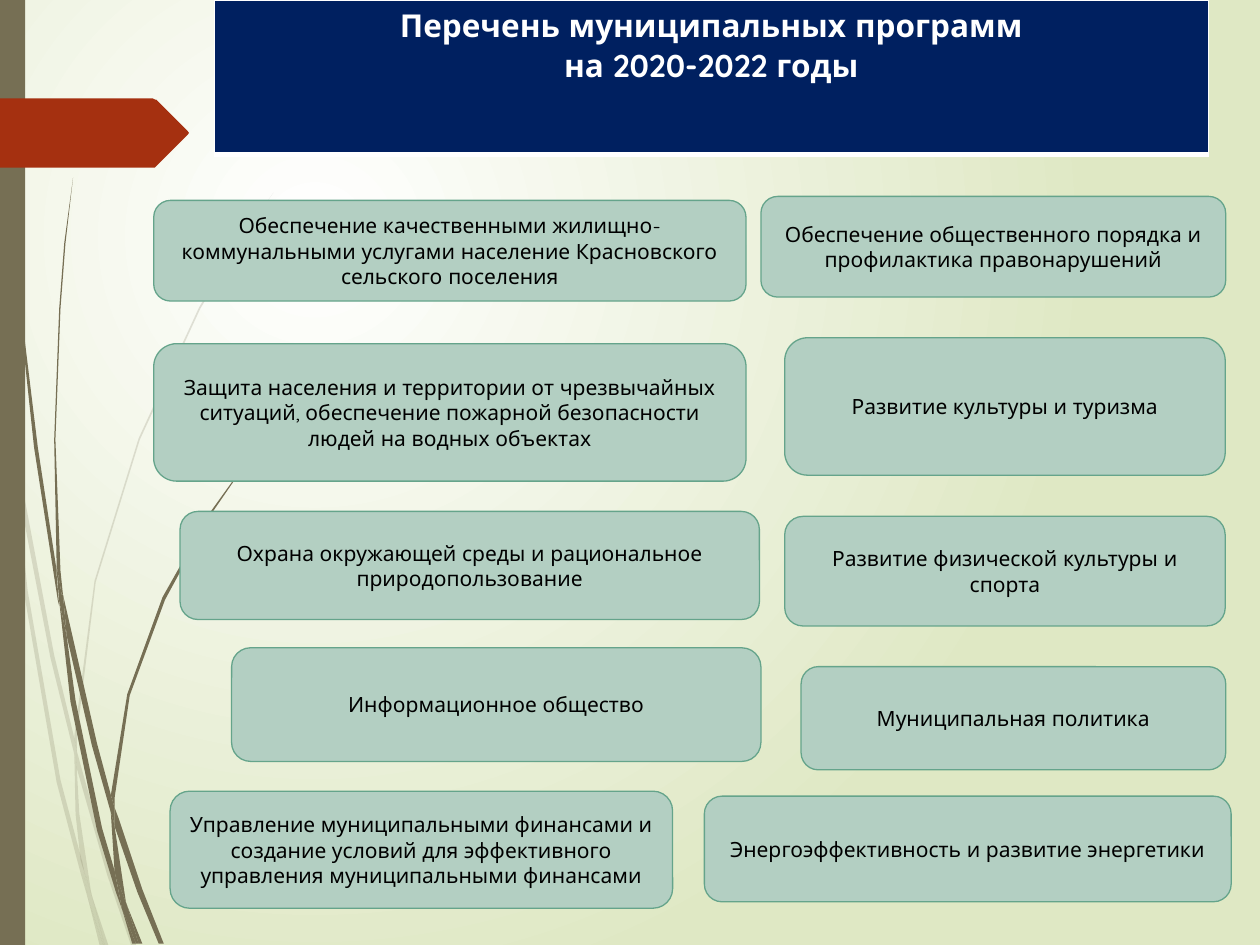
from lxml import etree
from pptx import Presentation
from pptx.dml.color import RGBColor
from pptx.enum.shapes import MSO_SHAPE
from pptx.enum.text import MSO_ANCHOR, PP_ALIGN
from pptx.oxml.ns import qn
from pptx.util import Cm, Pt

RECT, ROUND = MSO_SHAPE.RECTANGLE, MSO_SHAPE.ROUNDED_RECTANGLE
CENTER, MIDDLE = PP_ALIGN.CENTER, MSO_ANCHOR.MIDDLE
FONT = "Quicksand"
OLIVE, RED, NAVY = "766F54", "A53010", "002060"
MINT, GREEN, WHITE, BLACK = "B3CFC2", "65A48B", "FFFFFF", "000000"
UNIT = Cm(2.54) / 100  # outline points are on a grid of 0.0254 cm

TITLE = ["Перечень муниципальных программ", "на 2020-2022 годы"]

# Programs: left, top, width, height in cm, then the name
BOXES = [
    (3.1, 4.04, 11.94, 2.03, "Обеспечение качественными жилищно-коммунальными "
     "услугами население Красновского сельского поселения"),
    (15.34, 3.96, 9.37, 2.03, "Обеспечение общественного порядка и "
     "профилактика правонарушений"),
    (15.82, 6.81, 8.88, 2.77, "Развитие культуры и туризма"),
    (15.82, 10.41, 8.88, 2.21, "Развитие физической культуры и спорта"),
    (3.1, 6.93, 11.94, 2.77, "Защита населения и территории от чрезвычайных "
     "ситуаций, обеспечение пожарной безопасности людей на водных объектах"),
    (3.63, 10.31, 11.68, 2.18, "Охрана окружающей среды и рациональное "
     "природопользование"),
    (4.67, 13.06, 10.67, 2.29, "Информационное общество"),
    (16.15, 13.44, 8.56, 2.08, "Муниципальная политика"),
    (3.43, 15.95, 10.13, 2.36, "Управление муниципальными финансами и создание "
     "условий для эффективного управления муниципальными финансами"),
    (14.2, 16.05, 10.62, 2.13, "Энергоэффективность и развитие энергетики"),
]

# Grass outlines: pale blades behind, dark blades in front
PALE = [
    [(8, 350), (6, 322), (0, 282), (0, 299), (7, 344)],
    [(40, 522), (59, 599), (59, 586), (43, 520), (10, 345), (12, 376)],
    [(64, 607), (61, 596), (61, 610), (85, 694), (104, 750), (108, 750),
     (88, 692)],
    [(83, 750), (86, 750), (73, 711)],
    [(65, 683), (48, 619), (22, 469), (12, 376), (8, 350), (19, 470),
     (45, 621), (64, 693), (70, 714), (69, 707)],
    [(59, 599), (60, 646), (64, 683), (67, 692), (73, 711), (72, 706),
     (63, 646), (61, 610), (61, 608)],
    [(61, 584), (76, 462), (111, 349), (159, 245), (187, 198), (201, 175),
     (217, 153), (201, 175), (186, 197), (158, 244), (110, 348), (75, 461),
     (59, 584), (59, 586), (61, 596)],
    [(70, 714), (79, 750), (82, 750)],
    [(61, 608), (61, 610), (61, 596), (59, 586), (59, 599)],
    [(67, 692), (65, 683), (69, 707), (70, 714), (82, 750), (83, 750),
     (73, 711)],
]
DARK = [
    [(5, 110), (14, 233), (27, 355), (46, 477), (47, 481), (45, 457),
     (45, 453), (30, 355), (15, 232), (6, 109), (4, 48), (3, 0), (2, 0),
     (3, 48)],
    [(73, 592), (88, 645), (88, 633), (88, 631), (77, 590), (50, 472),
     (53, 505)],
    [(94, 649), (91, 641), (91, 656), (109, 708), (126, 749), (130, 749),
     (113, 706)],
    [(91, 691), (81, 657), (60, 556), (53, 505), (47, 477), (56, 557),
     (77, 659), (92, 708), (97, 722), (96, 717)],
    [(50, 472), (48, 453), (44, 349), (48, 245), (52, 193), (58, 141),
     (51, 193), (47, 245), (43, 349), (45, 449), (49, 472)],
    [(110, 749), (113, 749), (101, 719)],
    [(47, 477), (53, 505), (50, 472), (49, 472), (45, 449), (45, 453)],
    [(91, 633), (103, 552), (131, 476), (169, 406), (191, 374), (203, 359),
     (216, 344), (215, 344), (203, 358), (191, 373), (168, 405), (129, 474),
     (101, 551), (88, 631), (91, 641)],
    [(97, 722), (105, 749), (108, 749)],
    [(88, 645), (91, 692), (96, 706), (101, 719), (100, 716), (91, 656),
     (90, 651)],
    [(88, 645), (90, 651), (91, 656), (91, 641), (88, 631), (88, 633)],
    [(96, 706), (91, 691), (96, 717), (97, 722), (108, 749), (110, 749),
     (101, 719)],
]
ARROW = [(149, 107), (124, 132), (123, 133), (121, 133), (0, 133), (0, 78),
         (121, 78), (123, 79), (124, 79), (149, 104), (150, 105.5)]


def rgb(code):
    return RGBColor.from_string(code)


def paint(shape, fill, line=None):
    shape.shadow.inherit = False
    shape.fill.solid()
    shape.fill.fore_color.rgb = rgb(fill)
    if line:
        shape.line.color.rgb = rgb(line)
        shape.line.width = Pt(0.75)
    else:
        shape.line.fill.background()


def style(para, size, color, bold=False):
    para.alignment = CENTER
    for run in para.runs:
        font = run.font
        font.name, font.size, font.bold = FONT, Pt(size), bold
        font.color.rgb = rgb(color)


def draw(shapes, dots, fill, alpha=None):
    dots = [(round(x * UNIT), round(y * UNIT)) for x, y in dots]
    pen = shapes.build_freeform(*dots[0])
    pen.add_line_segments(dots[1:])
    shape = pen.convert_to_shape()
    paint(shape, fill)
    if alpha:
        tint = shape._element.spPr.find(".//" + qn("a:srgbClr"))
        etree.SubElement(tint, qn("a:alpha"), val=str(alpha * 1000))


def edge(cell, widths):
    props = cell._tc.get_or_add_tcPr()
    for spot, (side, width) in enumerate(widths):
        line = etree.Element(qn("a:ln" + side), w=str(Pt(width)))
        fill = etree.SubElement(line, qn("a:solidFill"))
        etree.SubElement(fill, qn("a:srgbClr"), val=WHITE)
        props.insert(spot, line)


def glow(slide):
    fill = slide.background.fill
    fill.gradient()
    for stop, code in zip(fill.gradient_stops, (WHITE, "DFE8C4")):
        stop.color.rgb = rgb(code)
    grad = slide._element.find(".//" + qn("a:gradFill"))
    grad.remove(grad.find(qn("a:lin")))
    ring = etree.SubElement(grad, qn("a:path"), path="circle")
    etree.SubElement(ring, qn("a:fillToRect"), l="50000", t="50000",
                     r="100000", b="100000")


def main():
    deck = Presentation()
    deck.slide_width, deck.slide_height = Cm(25.4), Cm(19.05)
    slide = deck.slides.add_slide(deck.slide_layouts[6])
    shapes = slide.shapes

    # Backdrop: glow, grass, side bar and arrow
    glow(slide)
    for blade in PALE:
        draw(shapes, blade, OLIVE, 20)
    for blade in DARK:
        draw(shapes, blade, OLIVE)
    bar = shapes.add_shape(RECT, 0, 0, Cm(0.51), deck.slide_height)
    paint(bar, OLIVE)
    draw(shapes, ARROW, RED)

    # Title table
    table = shapes.add_table(1, 1, Cm(4.32), 0, Cm(20.04), Cm(3.12)).table
    cell = table.cell(0, 0)
    cell.fill.solid()
    cell.fill.fore_color.rgb = rgb(NAVY)
    edge(cell, [("L", 1), ("R", 1), ("T", 1), ("B", 3)])
    cell.text_frame.text = "\n".join(TITLE)
    for para in cell.text_frame.paragraphs:
        style(para, 18, WHITE, True)

    # Program boxes
    for *place, name in BOXES:
        box = shapes.add_shape(ROUND, *map(Cm, place))
        paint(box, MINT, GREEN)
        frame = box.text_frame
        frame.word_wrap = True
        frame.vertical_anchor = MIDDLE
        frame.text = name
        style(frame.paragraphs[0], 12, BLACK)

    deck.save("out.pptx")


if __name__ == "__main__":
    main()
